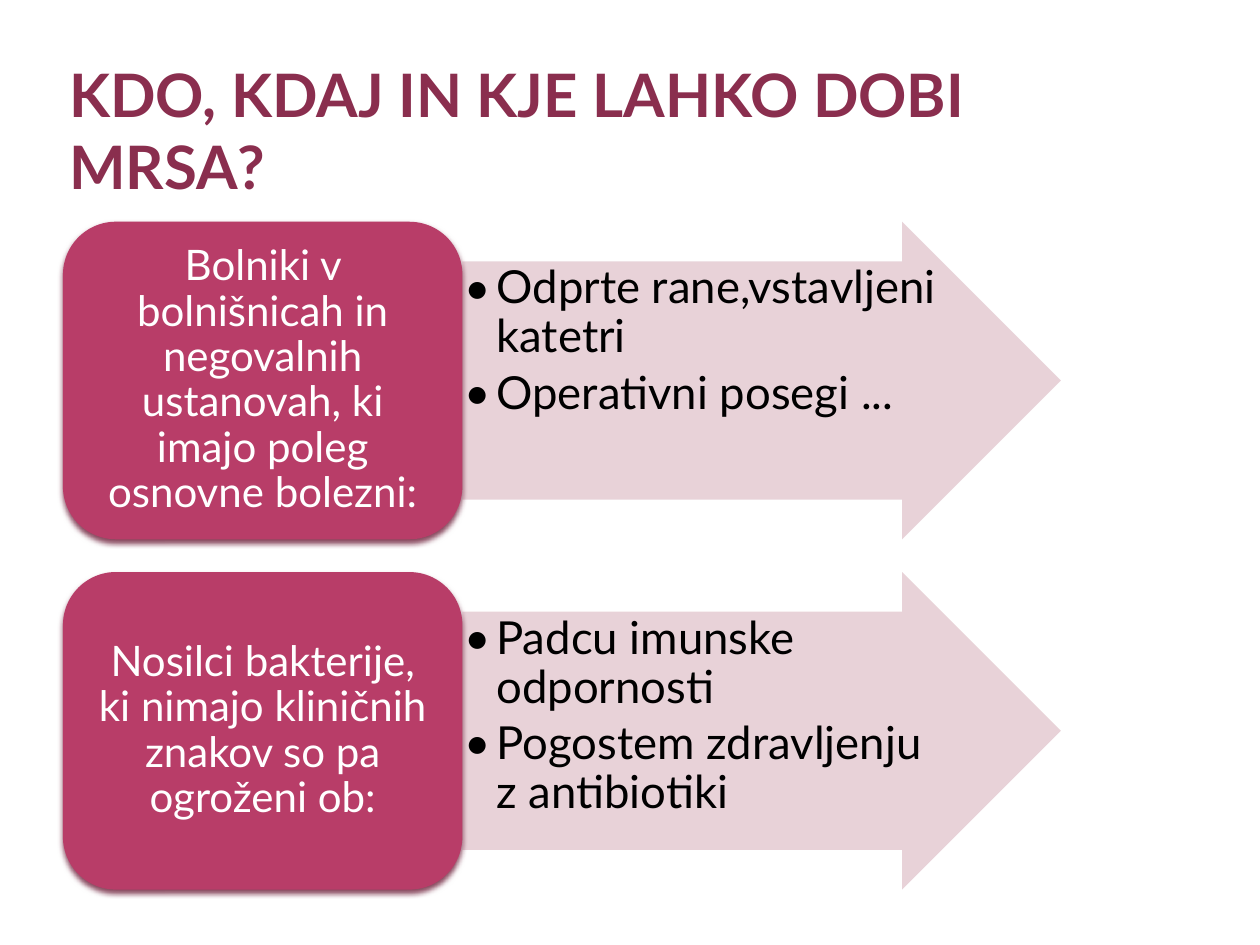
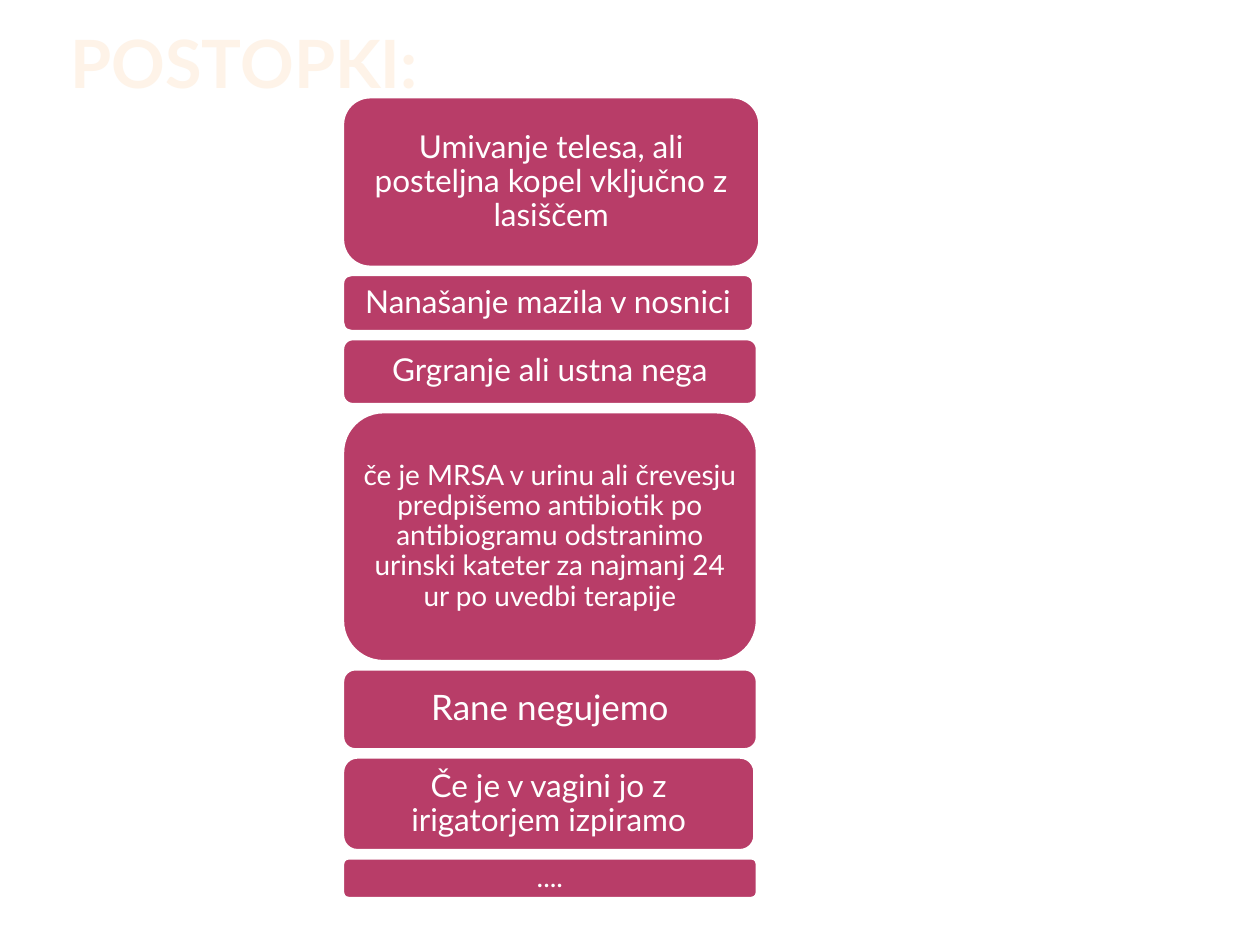
"""Build two slides about MRSA: who is at risk, and the care procedures."""
import dataclasses

import pptx
import pptx.dml.color
import pptx.enum.shapes
import pptx.enum.text
import pptx.oxml
import pptx.oxml.ns
import pptx.shapes.autoshape
import pptx.slide
import pptx.util

RGBColor = pptx.dml.color.RGBColor
Preset = pptx.enum.shapes.MSO_SHAPE
Align = pptx.enum.text.PP_ALIGN
Anchor = pptx.enum.text.MSO_ANCHOR

EMU_PER_PX = 9144
FONT = "Lato"
BERRY = RGBColor(0xB8, 0x3D, 0x68)
PALE_PINK = RGBColor(0xE6, 0xCE, 0xD4)
WINE = RGBColor(0x8A, 0x2E, 0x4E)
SHADOW = RGBColor(0x72, 0x26, 0x40)
OUTLINE = RGBColor(0x5E, 0x1A, 0x50)
BLACK = RGBColor(0, 0, 0)
WHITE = RGBColor(0xFF, 0xFF, 0xFF)
CREAM = RGBColor(0xFE, 0xF3, 0xE8)
CREAM_GRADIENT = (
    (0, RGBColor(0xFE, 0xF7, 0xF1)),
    (10, CREAM),
    (49, RGBColor(0xFB, 0xCF, 0x9C)),
    (50, RGBColor(0xF9, 0xB9, 0x4C)),
    (100, CREAM),
)


@dataclasses.dataclass(frozen=True)
class Box:
    """A rectangle in px."""
    left: int
    top: int
    width: int
    height: int


@dataclasses.dataclass(frozen=True)
class RiskGroup:
    """A group of people and the risks its arrow lists."""
    people: str
    risks: tuple[str, ...]


@dataclasses.dataclass(frozen=True)
class Step:
    """One box in the column of procedures."""
    text: str
    width: int
    height: int
    size: int = 18


RISK_GROUPS = (
    RiskGroup("Bolniki v bolnišnicah in negovalnih ustanovah, ki imajo poleg osnovne bolezni:",
              ("Odprte rane,vstavljeni katetri", "Operativni posegi ...")),
    RiskGroup("Nosilci bakterije, ki nimajo kliničnih znakov so pa ogroženi ob:",
              ("Padcu imunske odpornosti", "Pogostem zdravljenju z antibiotiki")),
)
STEPS = (
    Step("Umivanje telesa, ali posteljna kopel vključno z lasiščem", 333, 137),
    Step("Nanašanje mazila v nosnici", 328, 47),
    Step("Grgranje ali ustna nega", 331, 54),
    Step("če je MRSA v urinu ali črevesju predpišemo antibiotik po antibiogramu "
         "odstranimo urinski kateter za najmanj 24 ur po uvedbi terapije", 331, 200, 16),
    Step("Rane negujemo", 331, 66, 20),
    Step("Če je v vagini jo z irigatorjem izpiramo", 329, 76),
    Step("....", 331, 34, 16),
)


def px(length: int) -> pptx.util.Emu:
    """Turn px into EMU."""
    return pptx.util.Emu(length * EMU_PER_PX)


def xml(markup: str):
    """Make a drawing element from markup whose root tag has no namespace declaration."""
    tag, rest = markup[1:].split(" ", 1)
    return pptx.oxml.parse_xml(f"<{tag} {pptx.oxml.ns.nsdecls('a')} {rest}")


def place(shape: pptx.shapes.autoshape.Shape, box: Box) -> None:
    """Move and size a shape."""
    shape.left, shape.top = px(box.left), px(box.top)
    shape.width, shape.height = px(box.width), px(box.height)


def write(shape: pptx.shapes.autoshape.Shape, *texts: str, size: float, color: RGBColor,
          bold: bool = False, align: Align = Align.CENTER, anchor: Anchor = Anchor.MIDDLE,
          insets: tuple[int, int, int, int] = (10, 5, 10, 5), line_spacing: float = 0.9,
          space_after: float = 0, bullets: bool = False) -> None:
    """Write one paragraph per text in a shape."""
    frame = shape.text_frame
    frame.word_wrap = True
    frame.auto_size = pptx.enum.text.MSO_AUTO_SIZE.NONE
    frame.vertical_anchor = anchor
    frame.margin_left, frame.margin_top, frame.margin_right, frame.margin_bottom = map(px, insets)
    for index, text in enumerate(texts):
        paragraph = frame.add_paragraph() if index else frame.paragraphs[0]
        paragraph.alignment = align
        paragraph.line_spacing = line_spacing
        paragraph.space_before = pptx.util.Pt(0)
        paragraph.space_after = pptx.util.Pt(space_after)
        if bullets:
            paragraph.level = 1
            properties = paragraph._p.get_or_add_pPr()
            properties.set("marL", str(px(25)))
            properties.set("indent", str(px(-25)))
            properties.append(xml(f'<a:buFont typeface="{FONT}"/>'))
            properties.append(xml('<a:buChar char="•"/>'))
        run = paragraph.add_run()
        run.text = text
        run.font.name = FONT
        run.font.size = pptx.util.Pt(size)
        run.font.bold = bold
        run.font.color.rgb = color


def add_title(slide: pptx.slide.Slide, text: str, box: Box, size: float, color: RGBColor,
              gradient: tuple[tuple[int, RGBColor], ...] = ()) -> None:
    """Format the title placeholder with a hairline outline and an optional gradient."""
    title = slide.shapes.title
    place(title, box)
    write(title, text, size=size, color=color, bold=True, align=Align.LEFT,
          anchor=Anchor.BOTTOM, insets=(5, 0, 5, 0), line_spacing=1.0)
    properties = title.text_frame.paragraphs[0].runs[0].font._element
    if gradient:
        stops = "".join(f'<a:gs pos="{position * 1000}"><a:srgbClr val="{stop}"/></a:gs>'
                        for position, stop in gradient)
        solid = properties.find(pptx.oxml.ns.qn("a:solidFill"))
        properties.replace(solid, xml(
            f'<a:gradFill rotWithShape="1"><a:gsLst>{stops}</a:gsLst>'
            '<a:lin ang="5400000"/></a:gradFill>'))
    properties.insert(0, xml(
        f'<a:ln w="508"><a:solidFill><a:srgbClr val="{OUTLINE}"/></a:solidFill></a:ln>'))


def add_panel(slide: pptx.slide.Slide, preset: Preset, box: Box,
              fill: RGBColor) -> pptx.shapes.autoshape.Shape:
    """Add a flat filled shape without a line."""
    shape = slide.shapes.add_shape(preset, 0, 0, 0, 0)
    place(shape, box)
    shape.shadow.inherit = False
    shape.fill.solid()
    shape.fill.fore_color.rgb = fill
    shape.line.fill.background()
    return shape


def add_risk_group(slide: pptx.slide.Slide, group: RiskGroup, top: int) -> None:
    """Add an arrow listing risks, with the group's shadowed box at its tail."""
    arrow = add_panel(slide, Preset.RIGHT_ARROW, Box(367, top, 475, 252), PALE_PINK)
    arrow.adjustments[0] = 0.75
    arrow.adjustments[1] = 0.5
    color = arrow._element.spPr.find(".//" + pptx.oxml.ns.qn("a:srgbClr"))
    color.append(xml('<a:alpha val="90000"/>'))
    risks = slide.shapes.add_textbox(0, 0, 0, 0)
    place(risks, Box(367, top + 32, 380, 189))
    write(risks, *group.risks, size=26, color=BLACK, align=Align.LEFT, anchor=Anchor.TOP,
          insets=(2, 2, 2, 2), space_after=4, bullets=True)
    people = add_panel(slide, Preset.ROUNDED_RECTANGLE, Box(50, top, 317, 252), BERRY)
    effects = people._element.spPr.find(pptx.oxml.ns.qn("a:effectLst"))
    effects.append(xml(
        '<a:outerShdw blurRad="39370" dist="25400" dir="5400000" rotWithShape="0">'
        f'<a:srgbClr val="{SHADOW}"><a:alpha val="83000"/></a:srgbClr></a:outerShdw>'))
    write(people, group.people, size=24, color=WHITE)


def add_steps(slide: pptx.slide.Slide, left: int, top: int, gap: int) -> None:
    """Stack the procedure boxes with equal gaps."""
    for step in STEPS:
        box = Box(left, top, step.width, step.height)
        panel = add_panel(slide, Preset.ROUNDED_RECTANGLE, box, BERRY)
        panel.line.color.rgb = WHITE
        panel.line.width = pptx.util.Pt(3.15)
        write(panel, step.text, size=step.size, color=WHITE, insets=(7, 4, 7, 4))
        top += step.height + gap


def main() -> None:
    """Build and save the presentation."""
    presentation = pptx.Presentation()
    presentation.slide_width, presentation.slide_height = px(1000), px(750)
    title_only = presentation.slide_layouts[5]

    risk_slide = presentation.slides.add_slide(title_only)
    add_title(risk_slide, "KDO, KDAJ IN KJE LAHKO DOBI MRSA?", Box(50, 35, 792, 125), 34.2, WINE)
    for index, group in enumerate(RISK_GROUPS):
        add_risk_group(risk_slide, group, 176 + index * 278)

    steps_slide = presentation.slides.add_slide(title_only)
    add_title(steps_slide, "POSTOPKI:", Box(51, 13, 792, 68), 38, CREAM, CREAM_GRADIENT)
    add_steps(steps_slide, left=271, top=76, gap=4)

    presentation.save("out.pptx")


if __name__ == "__main__":
    main()
